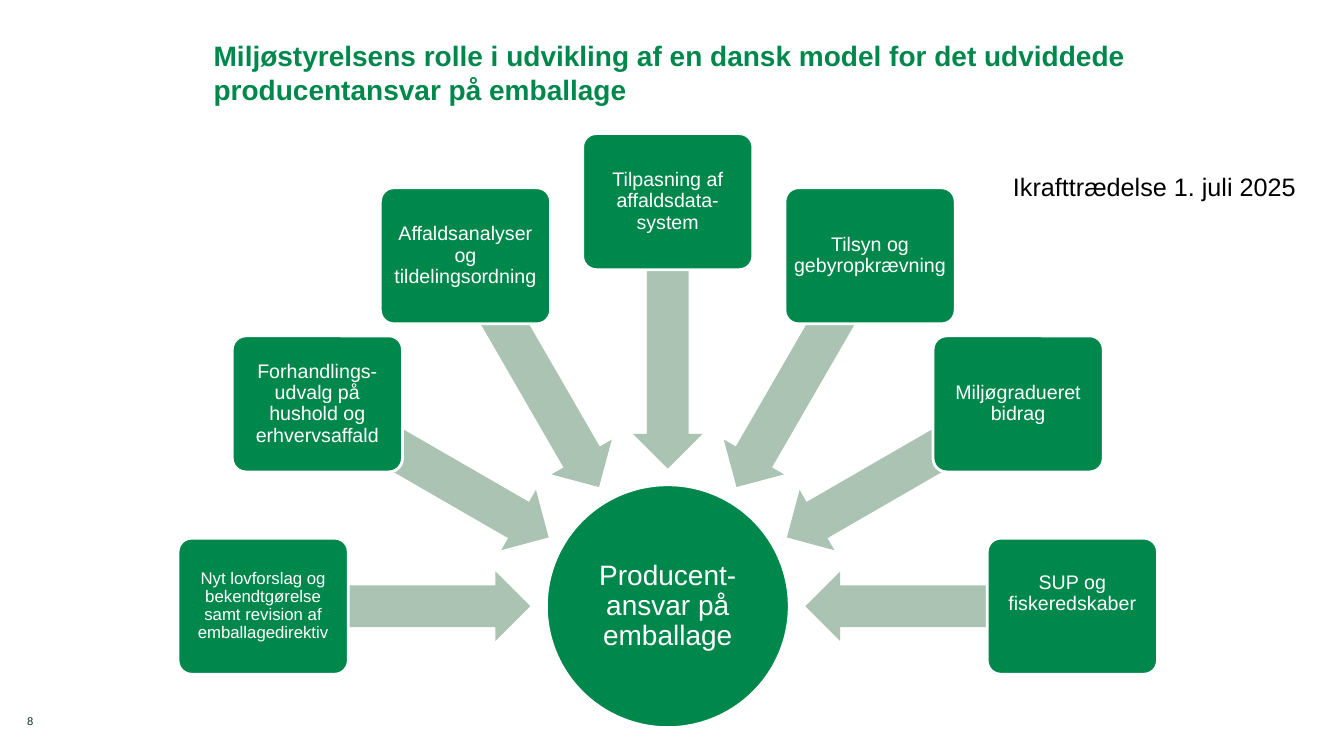
import math
from dataclasses import dataclass

import pptx
import pptx.dml.color
import pptx.enum.shapes
import pptx.enum.text
import pptx.util

Pt = pptx.util.Pt
SHAPE = pptx.enum.shapes.MSO_SHAPE
ALIGN = pptx.enum.text.PP_ALIGN
ANCHOR = pptx.enum.text.MSO_ANCHOR


@dataclass(frozen=True)
class Theme:
    font: str = "Arial"
    green: str = "00874B"
    sage: str = "ABC3B2"
    white: str = "FFFFFF"
    black: str = "000000"
    dark: str = "003127"
    title_size: int = 20
    hub_size: int = 20
    note_size: int = 18
    task_size: int = 14
    dense_size: int = 12
    number_size: int = 8


T = Theme()
HUB_X, HUB_Y, HUB_D = 477, 433, 173.5
TASK_R, TASK_W, TASK_H = 289, 121.6, 97.2
ARROW_R, ARROW_W, ARROW_H = 194, 191.5, 49.7

TASKS = [
    ("Nyt lovforslag og bekendtgørelse samt revision af emballagedirektiv", T.dense_size, 0),
    ("Forhandlings-udvalg på hushold og erhvervsaffald", T.task_size, 0),
    ("Affaldsanalyser og tildelingsordning", T.task_size, 0),
    ("Tilpasning af affaldsdata-system", T.task_size, 0),
    ("Tilsyn og gebyropkrævning", T.task_size, 0),
    ("Miljøgradueret bidrag", T.task_size, 0),
    ("SUP og fiskeredskaber", T.task_size, 18.5),
]


def rgb(color):
    return pptx.dml.color.RGBColor.from_string(color)


def write(sp, text, size, color, align, anchor, insets, bold=False, wrap=True, spacing=1.0):
    tf = sp.text_frame
    tf.word_wrap = wrap
    tf.auto_size = pptx.enum.text.MSO_AUTO_SIZE.NONE
    tf.vertical_anchor = anchor
    tf.margin_left, tf.margin_top, tf.margin_right, tf.margin_bottom = map(Pt, insets)
    p = tf.paragraphs[0]
    p.alignment = align
    p.line_spacing = spacing
    r = p.add_run()
    r.text = text
    r.font.name = T.font
    r.font.size = Pt(size)
    r.font.bold = bold
    r.font.color.rgb = rgb(color)


def add_centred(s, kind, x, y, w, h, fill, outline=None):
    sp = s.shapes.add_shape(kind, Pt(x - w / 2), Pt(y - h / 2), Pt(w), Pt(h))
    sp.shadow.inherit = False
    sp.fill.solid()
    sp.fill.fore_color.rgb = rgb(fill)
    if outline:
        sp.line.color.rgb = rgb(outline)
        sp.line.width = Pt(2)
    else:
        sp.line.fill.background()
    return sp


def on_circle(radius, angle):
    a = math.radians(angle)
    return HUB_X + radius * math.cos(a), HUB_Y + radius * math.sin(a)


def add_hub(s, text):
    sp = add_centred(s, SHAPE.OVAL, HUB_X, HUB_Y, HUB_D, HUB_D, T.green, T.white)
    write(sp, text, T.hub_size, T.white, ALIGN.CENTER, ANCHOR.MIDDLE, (1, 1, 1, 1), spacing=0.9)


def add_arrow(s, angle):
    x, y = on_circle(ARROW_R, angle)
    sp = add_centred(s, SHAPE.LEFT_ARROW, x, y, ARROW_W, ARROW_H, T.sage)
    sp.adjustments[0] = 0.6
    sp.adjustments[1] = 0.5
    sp.rotation = angle % 360


def add_task(s, angle, text, size, lift):
    x, y = on_circle(TASK_R, angle)
    sp = add_centred(s, SHAPE.ROUNDED_RECTANGLE, x, y, TASK_W, TASK_H, T.green, T.white)
    sp.adjustments[0] = 0.1
    write(sp, text, size, T.white, ALIGN.CENTER, ANCHOR.MIDDLE, (2, 2, 2, 2 + lift), spacing=0.9)


def add_title(s, text):
    sp = s.shapes.title
    sp.left, sp.top, sp.width, sp.height = Pt(145.4), Pt(23.8), Pt(692), Pt(55.4)
    write(sp, text, T.title_size, T.green, ALIGN.LEFT, ANCHOR.TOP, (7.2, 3.6, 7.2, 3.6), bold=True)


def add_label(s, box, text, size, color, align, anchor, wrap):
    sp = s.shapes.add_textbox(*map(Pt, box))
    write(sp, text, size, color, align, anchor, (0, 0, 0, 0), wrap=wrap)


def main():
    prs = pptx.Presentation()
    prs.slide_width, prs.slide_height = Pt(960), Pt(540)
    s = prs.slides.add_slide(prs.slide_layouts[5])
    add_title(s, "Miljøstyrelsens rolle i udvikling af en dansk model "
                 "for det udviddede producentansvar på emballage")
    add_hub(s, "Producent-ansvar på emballage")
    for i, (text, size, lift) in enumerate(TASKS):
        angle = 180 + 30 * i
        add_arrow(s, angle)
        add_task(s, angle, text, size, lift)
    add_label(s, (723.6, 122.4, 203.8, 21.6), "Ikrafttrædelse 1. juli 2025",
              T.note_size, T.black, ALIGN.LEFT, ANCHOR.TOP, False)
    add_label(s, (0, 504, 23.8, 19.8 - 4), "8",
              T.number_size, T.dark, ALIGN.RIGHT, ANCHOR.BOTTOM, True)
    prs.save("out.pptx")


if __name__ == "__main__":
    main()
